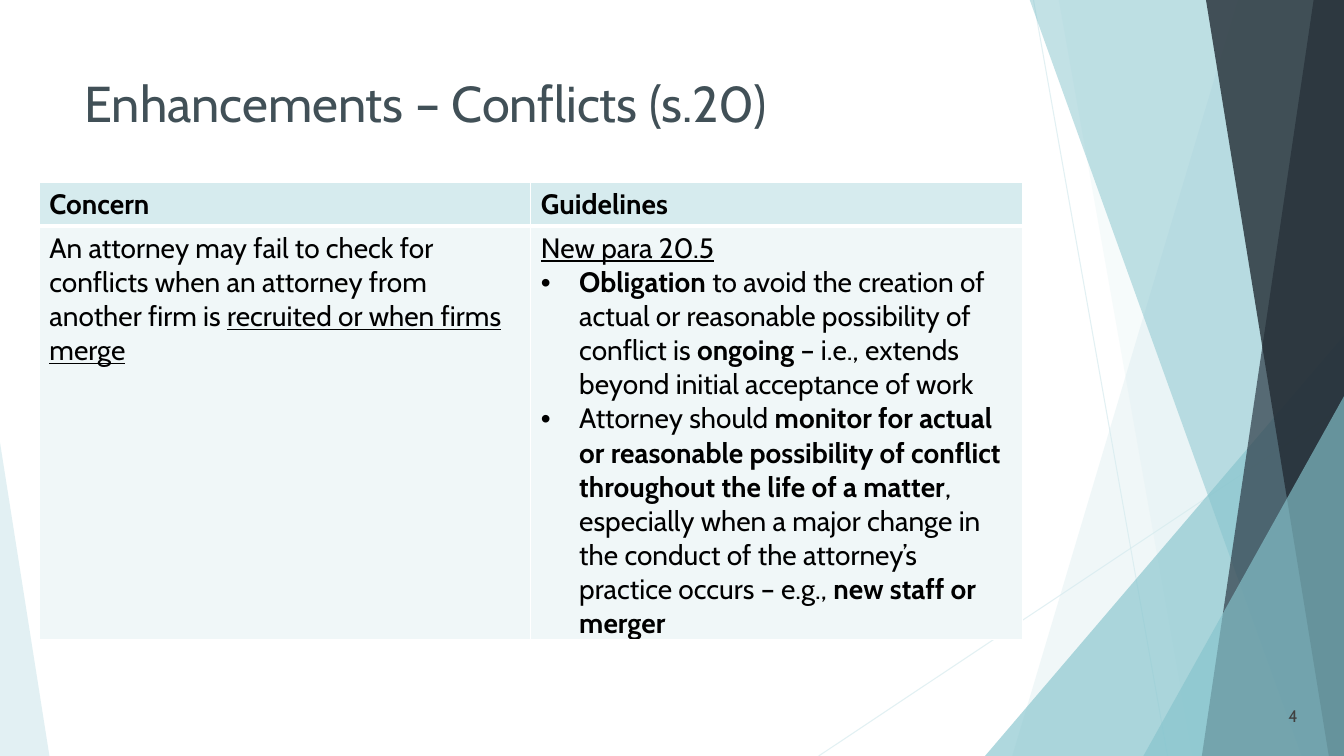
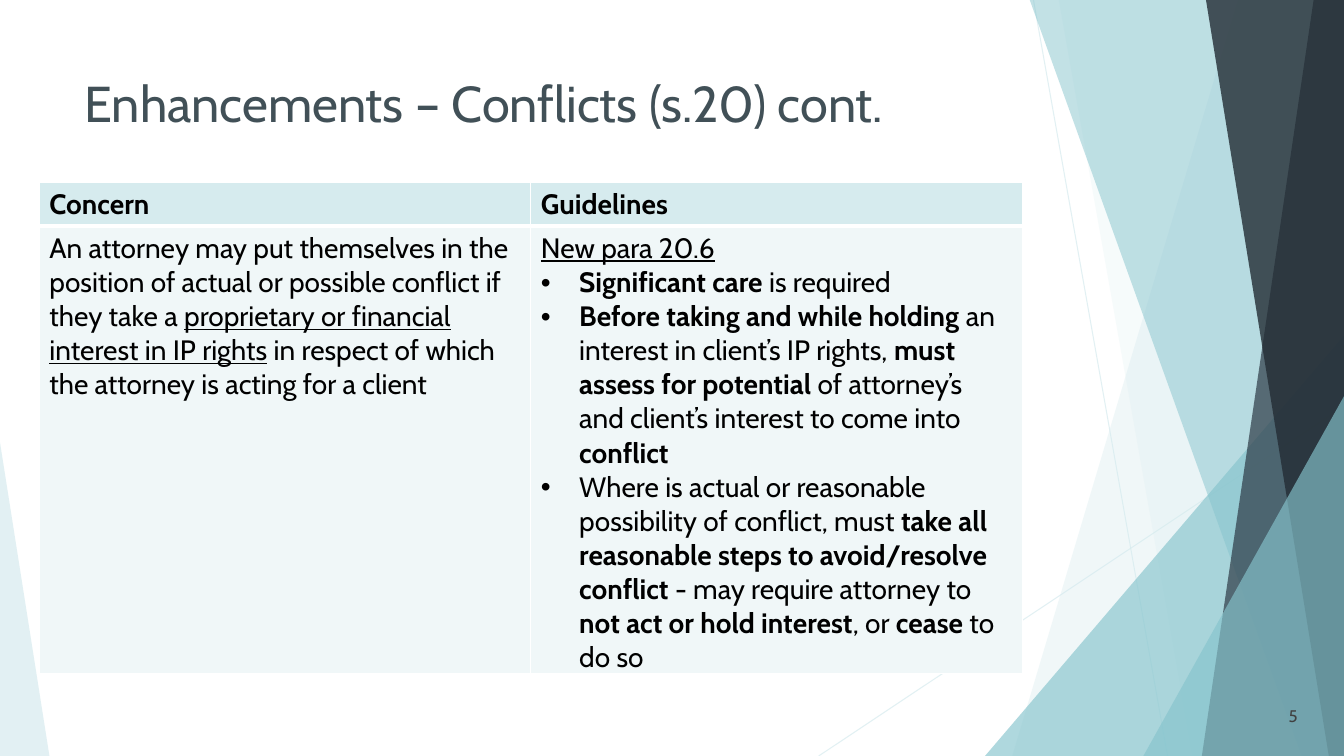
import lxml.etree
import pptx
import pptx.dml.color
import pptx.enum.shapes
import pptx.enum.text
import pptx.oxml.ns
import pptx.util

Inches = pptx.util.Inches
Pt = pptx.util.Pt
qn = pptx.oxml.ns.qn

FONT = "Cabin"
COLORS = {
    "background": "FFFFFF",
    "border": "FFFFFF",
    "pale": "D6EBEE",
    "teal": "86C4CD",
    "slate": "2E3B46",
    "ink": "232C34",
    "body": "F0F7F8",
    "title": "415057",
    "text": "000000",
    "number": "404040",
}
WIDTH, HEIGHT = 13.33, 7.5
BLEED = -0.01
TRIANGLE = pptx.enum.shapes.MSO_SHAPE.ISOSCELES_TRIANGLE
BOLD, UNDERLINE = "bold", "underline"

HEADINGS = ["Concern", "Guidelines"]
SLIDES = [
    {
        "number": 4,
        "title": "Enhancements – Conflicts (s.20)",
        "concern": [
            "An attorney may fail to check for conflicts when an attorney from another firm is ",
            ("recruited or when firms merge", UNDERLINE),
        ],
        "paragraph": "New para 20.5",
        "points": [
            [
                ("Obligation", BOLD),
                " to avoid the creation of actual or reasonable possibility of conflict is ",
                ("ongoing ", BOLD),
                "– i.e., extends beyond initial acceptance of work",
            ],
            [
                "Attorney should ",
                ("monitor for actual or reasonable possibility of conflict "
                 "throughout the life of a matter", BOLD),
                ", especially when a major change in the conduct of the "
                "attorney’s practice occurs – e.g., ",
                ("new staff or merger", BOLD),
            ],
        ],
    },
    {
        "number": 5,
        "title": "Enhancements – Conflicts (s.20) cont.",
        "concern": [
            "An attorney may put themselves in the position of actual or "
            "possible conflict if they take a ",
            ("proprietary or financial interest in IP rights", UNDERLINE),
            " in respect of which the attorney is acting for a client",
        ],
        "paragraph": "New para 20.6",
        "points": [
            [("Significant care", BOLD), " is required"],
            [
                ("Before taking and while holding ", BOLD),
                "an interest in client’s IP rights, ",
                ("must assess for potential ", BOLD),
                "of attorney’s and client’s interest to come into ",
                ("conflict", BOLD),
            ],
            [
                "Where is actual or reasonable possibility of conflict, must ",
                ("take all reasonable steps to avoid/resolve conflict", BOLD),
                " - may require attorney to ",
                ("not act or hold interest", BOLD),
                ", or ",
                ("cease", BOLD),
                " to do so",
            ],
        ],
    },
]


def rgb(name):
    return pptx.dml.color.RGBColor.from_string(COLORS[name])


def set_opacity(shape, percent):
    color = shape.element.spPr.find(".//" + qn("a:srgbClr"))
    lxml.etree.SubElement(color, qn("a:alpha"), val=str(percent * 1000))


def fill_shape(shape, color, opacity):
    shape.shadow.inherit = False
    shape.fill.solid()
    shape.fill.fore_color.rgb = rgb(color)
    shape.line.fill.background()
    set_opacity(shape, opacity)


def add_hairline(slide, start, end):
    line = slide.shapes.add_connector(
        pptx.enum.shapes.MSO_CONNECTOR.STRAIGHT,
        *[Inches(value) for value in start + end])
    line.line.color.rgb = rgb("pale")
    line.line.width = Pt(0.75)
    set_opacity(line, 70)
    lxml.etree.SubElement(line.element.spPr, qn("a:effectLst"))


def add_pane(slide, top_x, bottom_x, color, opacity):
    corners = [(WIDTH, BLEED), (WIDTH, HEIGHT), (bottom_x, HEIGHT)]
    builder = slide.shapes.build_freeform(Inches(top_x), Inches(BLEED))
    builder.add_line_segments([(Inches(x), Inches(y)) for x, y in corners])
    fill_shape(builder.convert_to_shape(), color, opacity)


def add_corner(slide, left, top, width, peak, color, opacity):
    corner = slide.shapes.add_shape(
        TRIANGLE, Inches(left), Inches(top), Inches(width), Inches(HEIGHT - top))
    corner.adjustments[0] = peak
    fill_shape(corner, color, opacity)


def add_backdrop(slide):
    slide.background.fill.solid()
    slide.background.fill.fore_color.rgb = rgb("background")
    add_hairline(slide, (10.25, 0), (11.58, HEIGHT))
    add_hairline(slide, (WIDTH, 4.03), (8.12, HEIGHT))
    add_pane(slide, 12.28, 10.04, "pale", 36)
    add_pane(slide, 10.5, 11.83, "pale", 20)
    add_corner(slide, 9.77, 3.33, 3.56, 1, "teal", 66)
    add_pane(slide, 10.21, 12.91, "teal", 50)
    add_pane(slide, 13.03, 11.92, "slate", 70)
    add_pane(slide, 11.96, 13.18, "ink", 80)
    add_corner(slide, 11.34, 3.93, 1.99, 1, "teal", 66)
    add_corner(slide, 0, 4.39, 0.49, 0, "pale", 70)


def write_paragraph(paragraph, runs, size, color):
    paragraph.font.name = FONT
    paragraph.font.size = Pt(size)
    paragraph.font.color.rgb = rgb(color)
    for item in runs:
        text, style = (item, None) if isinstance(item, str) else item
        run = paragraph.add_run()
        run.text = text
        if style == BOLD:
            run.font.bold = True
        elif style == UNDERLINE:
            run.font.underline = True


def add_text(slide, text, box, size, color):
    shape = slide.shapes.add_textbox(*[Inches(value) for value in box])
    shape.text_frame.word_wrap = True
    write_paragraph(shape.text_frame.paragraphs[0], [text], size, color)
    return shape.text_frame


def add_title(slide, text):
    add_text(slide, text, (0.74, 0.67, 9.4, 0.99), 36, "title")


def add_number(slide, number):
    frame = add_text(slide, str(number), (12.22, 6.9, 0.75, 0.4), 12, "number")
    frame.vertical_anchor = pptx.enum.text.MSO_ANCHOR.MIDDLE
    frame.paragraphs[0].alignment = pptx.enum.text.PP_ALIGN.RIGHT


def set_bullet(paragraph):
    properties = paragraph._p.get_or_add_pPr()
    properties.set("marL", str(Inches(0.38)))
    properties.set("indent", str(-Inches(0.38)))
    lxml.etree.SubElement(properties, qn("a:buFont"), typeface="Arial")
    lxml.etree.SubElement(properties, qn("a:buChar"), char="•")


def set_borders(cell, top, bottom):
    properties = cell._tc.get_or_add_tcPr()
    for side, width in (("L", 1), ("R", 1), ("T", top), ("B", bottom)):
        border = lxml.etree.SubElement(
            properties, qn("a:ln" + side), w=str(Pt(width)))
        fill = lxml.etree.SubElement(border, qn("a:solidFill"))
        lxml.etree.SubElement(fill, qn("a:srgbClr"), val=COLORS["border"])


def fill_cell(cell, paragraphs, color, top, bottom):
    set_borders(cell, top, bottom)
    cell.fill.solid()
    cell.fill.fore_color.rgb = rgb(color)
    frame = cell.text_frame
    for index, (runs, bulleted) in enumerate(paragraphs):
        paragraph = frame.add_paragraph() if index else frame.paragraphs[0]
        if bulleted:
            set_bullet(paragraph)
        write_paragraph(paragraph, runs, 20, "text")


def add_guideline_table(slide, content):
    table = slide.shapes.add_table(
        2, 2, Inches(0.39), Inches(1.81), Inches(9.75), Inches(4.51)).table
    table.horz_banding = False
    table.rows[0].height = Inches(0.41)
    table.rows[1].height = Inches(4.1)
    for column, heading in enumerate(HEADINGS):
        fill_cell(table.cell(0, column), [([(heading, BOLD)], False)], "pale", 1, 3)
    guidelines = [([(content["paragraph"], UNDERLINE)], False)]
    guidelines += [(point, True) for point in content["points"]]
    fill_cell(table.cell(1, 0), [(content["concern"], False)], "body", 3, 1)
    fill_cell(table.cell(1, 1), guidelines, "body", 3, 1)


def main():
    presentation = pptx.Presentation()
    presentation.slide_width = Inches(WIDTH)
    presentation.slide_height = Inches(HEIGHT)
    for content in SLIDES:
        slide = presentation.slides.add_slide(presentation.slide_layouts[6])
        add_backdrop(slide)
        add_title(slide, content["title"])
        add_guideline_table(slide, content)
        add_number(slide, content["number"])
    presentation.save("out.pptx")


if __name__ == "__main__":
    main()
